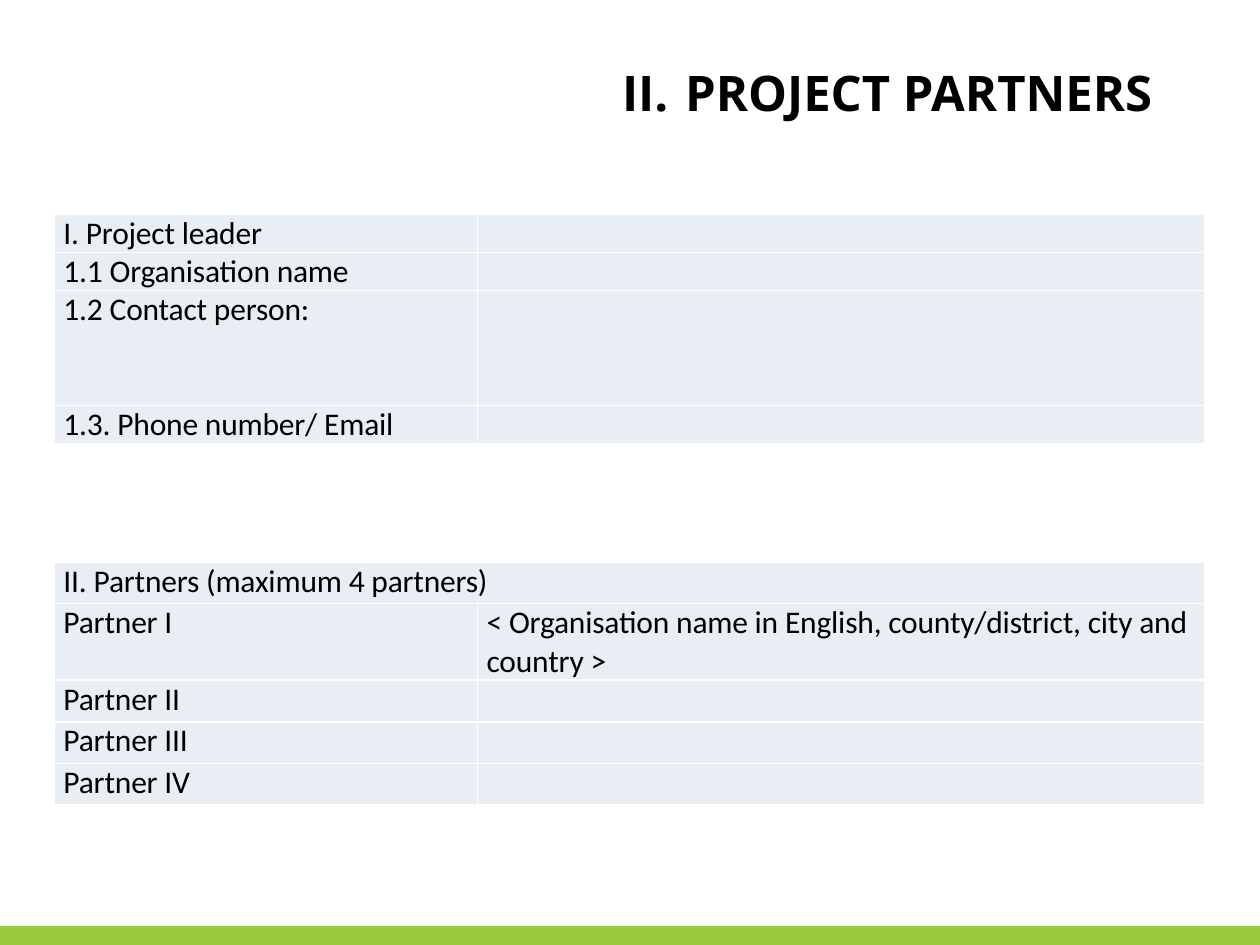
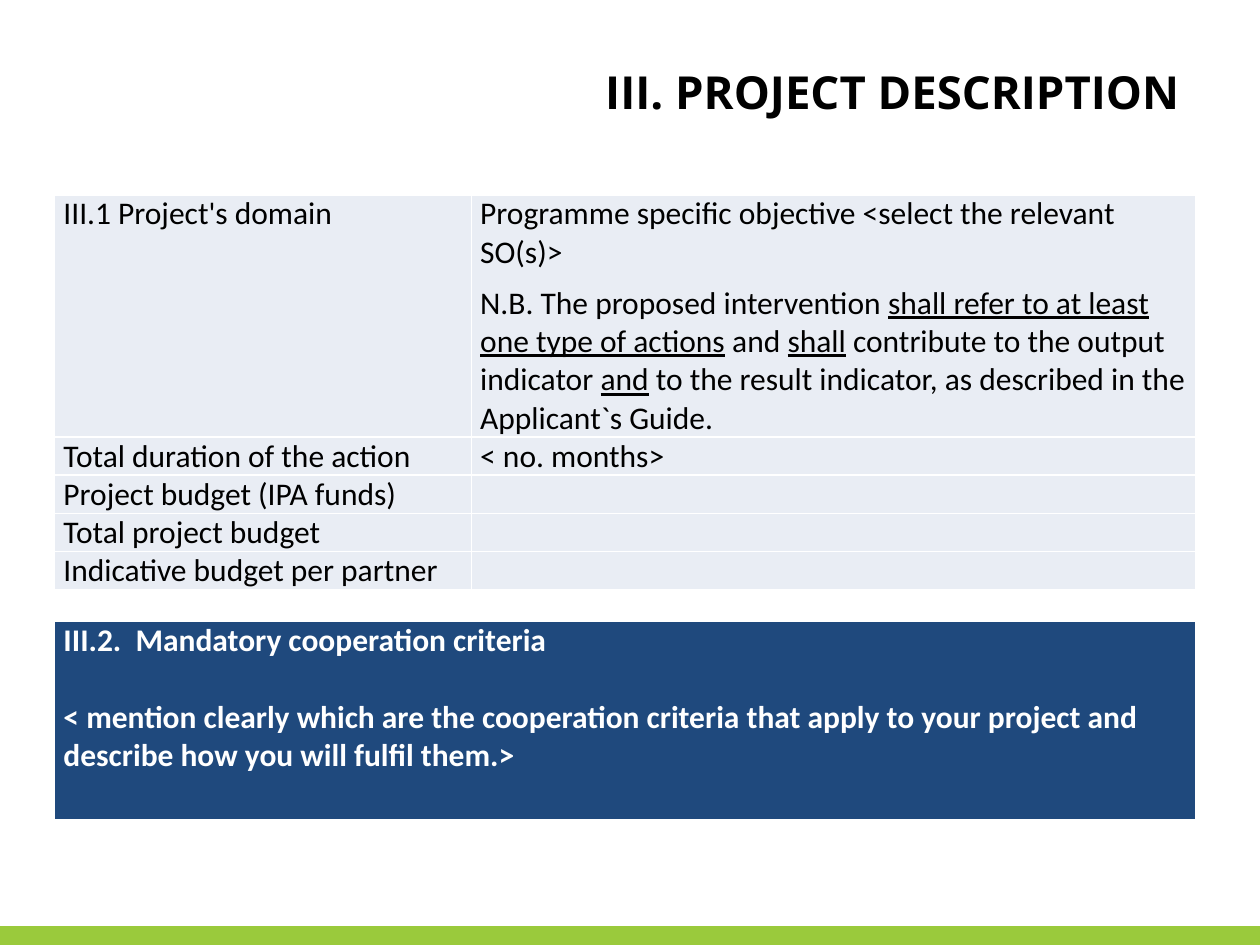
from collections import namedtuple

from lxml import etree
from pptx import Presentation
from pptx.dml.color import RGBColor
from pptx.enum.shapes import MSO_SHAPE
from pptx.enum.text import MSO_ANCHOR, PP_ALIGN
from pptx.oxml.ns import qn
from pptx.util import Cm, Pt

RECTANGLE = MSO_SHAPE.RECTANGLE
MIDDLE = MSO_ANCHOR.MIDDLE
CENTER = PP_ALIGN.CENTER

BLACK, WHITE = "000000", "FFFFFF"
GREEN, NAVY, PALE = "9ACA3C", "1F497D", "E9EDF4"
SLIDE_WIDTH, SLIDE_HEIGHT, BAND_HEIGHT = 25.4, 19.05, 0.38
LEFT = 1.1
LINE = 0.77       # height of a one-line row
TALL_LINE = 0.84

Box = namedtuple("Box", "left top width height")
BODY = {"name": "Calibri", "size": Pt(18), "bold": False, "color": BLACK}
CALLOUT = {**BODY, "bold": True, "color": WHITE}
TITLE = {"name": "Open Sans", "bold": True, "color": BLACK}


def rgb(value):
    return RGBColor.from_string(value)


def apply_format(font, values):
    for name, value in values.items():
        if name == "color":
            font.color.rgb = rgb(value)
        else:
            setattr(font, name, value)


def write_paragraphs(text_frame, paragraphs, values, gap=0, tracking=0):
    """Fill a frame; a paragraph is a string or a list of runs, every second one underlined."""
    for number, content in enumerate(paragraphs):
        paragraph = text_frame.paragraphs[0] if number == 0 else text_frame.add_paragraph()
        if number:
            paragraph.space_before = Pt(gap)
        runs = [content] if isinstance(content, str) else content
        for position, text in enumerate(runs):
            run = paragraph.add_run()
            run.text = text
            apply_format(run.font, values)
            if position % 2:
                run.font.underline = True
            if tracking:
                run.font._rPr.set("spc", str(round(tracking * 100)))


def add_borders(cell, bottom_width):
    properties = cell._tc.get_or_add_tcPr()
    for side, width in (("L", 1), ("R", 1), ("T", 1), ("B", bottom_width)):
        line = etree.SubElement(properties, qn(f"a:ln{side}"), w=str(Pt(width)))
        fill = etree.SubElement(line, qn("a:solidFill"))
        etree.SubElement(fill, qn("a:srgbClr"), val=WHITE)


def add_grid(slide, left, top, column_widths, row_heights, rows, values=BODY,
             fill=PALE, gap=0, tracking=0, bottom_width=1):
    """Add a table; rows hold lists of paragraphs per cell, and a row may be short."""
    frame = slide.shapes.add_table(
        len(rows), len(column_widths), Cm(left), Cm(top),
        Cm(sum(column_widths)), Cm(sum(row_heights)))
    table = frame.table
    table.first_row = table.horz_banding = False
    for column, width in zip(table.columns, column_widths):
        column.width = Cm(width)
    for row, height, contents in zip(table.rows, row_heights, rows):
        row.height = Cm(height)
        for cell in row.cells:
            cell.margin_left = cell.margin_right = Cm(0.18)
            cell.margin_top = cell.margin_bottom = 0
            add_borders(cell, bottom_width)
            cell.fill.solid()
            cell.fill.fore_color.rgb = rgb(fill)
        for cell, paragraphs in zip(row.cells, contents):
            write_paragraphs(cell.text_frame, paragraphs, values, gap, tracking)
    return table


def add_title(slide, box, text, size):
    shape = slide.shapes.add_textbox(*map(Cm, box))
    text_frame = shape.text_frame
    text_frame.word_wrap = True
    text_frame.vertical_anchor = MIDDLE
    write_paragraphs(text_frame, [text], {**TITLE, "size": Pt(size)})
    text_frame.paragraphs[0].alignment = CENTER


def add_footer_band(slide):
    band = slide.shapes.add_shape(
        RECTANGLE, 0, Cm(SLIDE_HEIGHT - BAND_HEIGHT), Cm(SLIDE_WIDTH), Cm(BAND_HEIGHT))
    band.shadow.inherit = False
    band.fill.solid()
    band.fill.fore_color.rgb = rgb(GREEN)
    band.line.fill.background()


def new_slide(presentation, title_box, title, title_size):
    slide = presentation.slides.add_slide(presentation.slide_layouts[6])
    add_footer_band(slide)
    add_title(slide, title_box, title, title_size)
    return slide


def build_partners(presentation):
    slide = new_slide(presentation, Box(11.71, 0.53, 12.6, 2.64),
                      "II.\tPROJECT PARTNERS ", 28)
    columns = [8.53, 14.66]
    leader_labels = ["I. Project leader", "1.1 Organisation name",
                     "1.2 Contact person:", "1.3. Phone number/ Email"]
    add_grid(slide, LEFT, 4.32, columns, [LINE, LINE, 3 * LINE, LINE],
             [[[label]] for label in leader_labels], tracking=-0.1)

    partner_hint = "< Organisation name in English, county/district, city and country >"
    partner_rows = [
        [["II. Partners (maximum 4 partners)"]],
        [["Partner I"], [partner_hint]],
        *([[f"Partner {numeral}"]] for numeral in ("II", "III", "IV")),
    ]
    partners = add_grid(slide, LEFT, 11.33, columns,
                        [TALL_LINE, 2 * LINE] + [TALL_LINE] * 3,
                        partner_rows, tracking=-0.1)
    partners.cell(0, 0).merge(partners.cell(0, 1))


def build_description(presentation):
    slide = new_slide(presentation, Box(11.51, 0.53, 13.21, 2.64),
                      "III. PROJECT DESCRIPTION ", 26)
    columns = [8.4, 14.6]
    objective = [
        "Programme specific objective <select the relevant SO(s)>",
        ["N.B. The proposed intervention ", "shall refer to at least one type of actions",
         " and ", "shall", " contribute to the output indicator ", "and",
         " to the result indicator, as described in the Applicant`s Guide."],
    ]
    description_rows = [
        [["III.1 Project's domain"], objective],
        [["Total duration of the action"], ["< no. months>"]],
        [["Project budget (IPA funds)"]],
        [["Total project budget"]],
        [["Indicative budget per partner"]],
    ]
    add_grid(slide, LEFT, 3.93, columns, [4.88] + [LINE] * 4, description_rows, gap=7)

    criteria = [
        "III.2.  Mandatory cooperation criteria",
        "< mention clearly which are the cooperation criteria that apply to your project "
        "and describe how you will fulfil them.>",
    ]
    add_grid(slide, LEFT, 12.53, [sum(columns)], [4.02], [[criteria]],
             values=CALLOUT, fill=NAVY, gap=22, bottom_width=3)


def main():
    presentation = Presentation()
    presentation.slide_width = Cm(SLIDE_WIDTH)
    presentation.slide_height = Cm(SLIDE_HEIGHT)
    build_partners(presentation)
    build_description(presentation)
    presentation.save("out.pptx")


if __name__ == "__main__":
    main()
